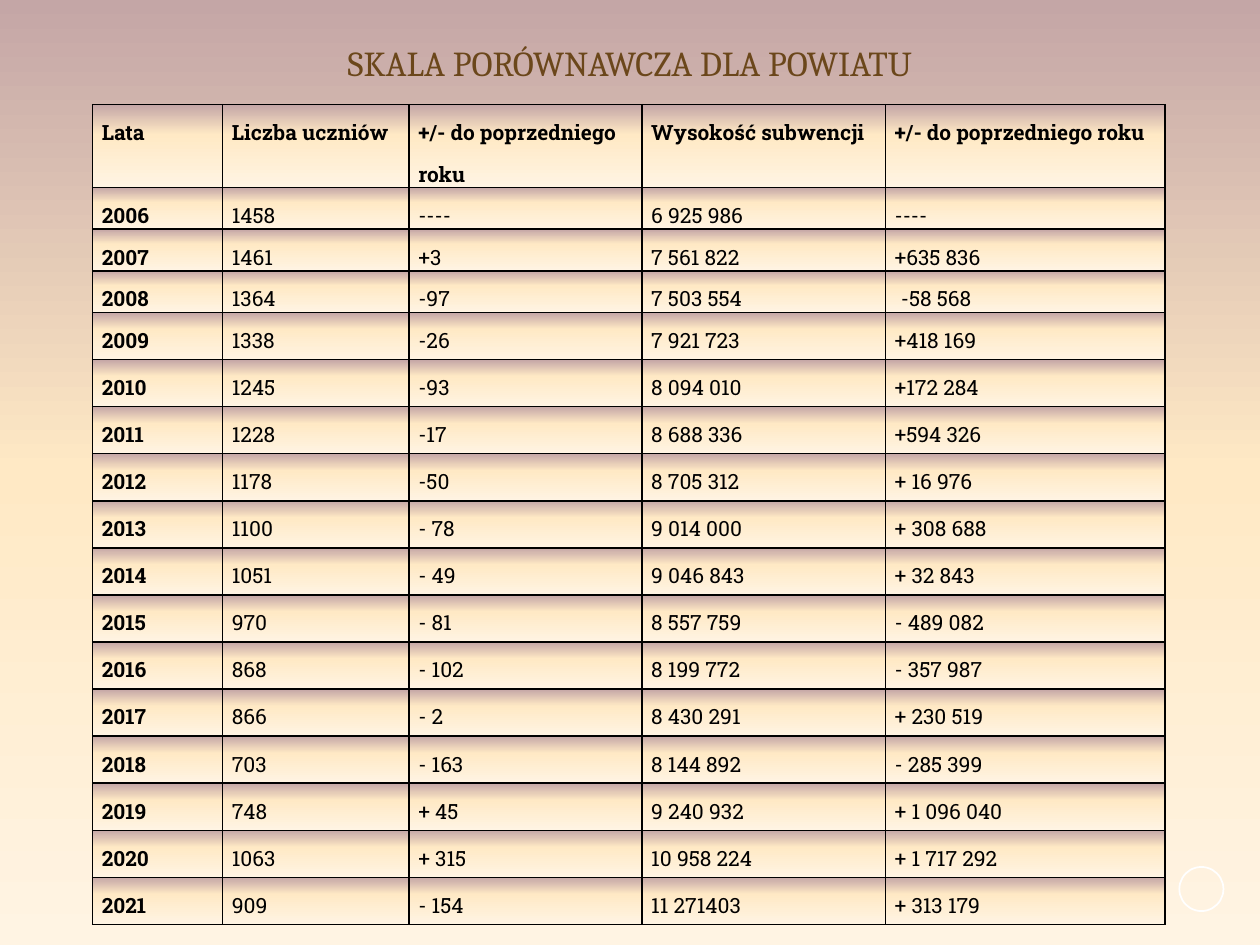
"""Build the slide comparing pupil numbers and subsidy by year for the county."""
from copy import deepcopy

from lxml.etree import SubElement
from pptx import Presentation
from pptx.dml.color import RGBColor
from pptx.enum.shapes import MSO_SHAPE as Shape
from pptx.enum.text import MSO_ANCHOR as Anchor, PP_ALIGN as Align
from pptx.oxml.ns import qn
from pptx.util import Pt

COLORS = {
    "mauve": "C4A6A6",
    "peach": "FFE9C5",
    "cream": "FFF4E3",
    "title": "6B471B",
    "black": "000000",
    "white": "FFFFFF",
}
COLUMN_WIDTHS = [74.3, 106.6, 133.1, 139.1, 159.7]
ROW_HEIGHTS = [47.4] + [23.8] * 3 + [26.92] * 13
ROWS = [
    ("Lata", "Liczba uczniów", "+/- do poprzedniego roku", "Wysokość subwencji", "+/- do poprzedniego roku"),
    ("2006", "1458", "----", "6 925 986", "----"),
    ("2007", "1461", "+3", "7 561 822", "+635 836"),
    ("2008", "1364", "-97", "7 503 554", "-58 568"),
    ("2009", "1338", "-26", "7 921 723", "+418 169"),
    ("2010", "1245", "-93", "8 094 010", "+172 284"),
    ("2011", "1228", "-17", "8 688 336", "+594 326"),
    ("2012", "1178", "-50", "8 705 312", "+ 16 976"),
    ("2013", "1100", "- 78", "9 014 000", "+ 308 688"),
    ("2014", "1051", "- 49", "9 046 843", "+ 32 843"),
    ("2015", "970", "- 81", "8 557 759", "- 489 082"),
    ("2016", "868", "- 102", "8 199 772", "- 357 987"),
    ("2017", "866", "- 2", "8 430 291", "+ 230 519"),
    ("2018", "703", "- 163", "8 144 892", "- 285 399"),
    ("2019", "748", "+ 45", "9 240 932", "+ 1 096 040"),
    ("2020", "1063", "+ 315", "10 958 224", "+ 1 717 292"),
    ("2021", "909", "- 154", "11 271403", "+ 313 179"),
]


def set_gradient(fill, element, middle):
    fill.gradient()
    fill.gradient_angle = 270
    stop_list = element.xpath(".//a:gsLst")[0]
    stop_list.append(deepcopy(stop_list[0]))
    names = ("mauve", "peach", "cream")
    for stop, position, name in zip(fill.gradient_stops, (0, middle, 1), names):
        stop.position = position
        stop.color.rgb = RGBColor.from_string(COLORS[name])


def set_borders(cell):
    properties = cell._tc.get_or_add_tcPr()
    for index, side in enumerate(("lnL", "lnR", "lnT", "lnB")):
        line = SubElement(properties, qn(f"a:{side}"), w=str(Pt(1)))
        solid = SubElement(line, qn("a:solidFill"))
        SubElement(solid, qn("a:srgbClr"), val=COLORS["black"])
        properties.insert(index, line)


presentation = Presentation()
presentation.slide_width, presentation.slide_height = Pt(720), Pt(540)
slide = presentation.slides.add_slide(presentation.slide_layouts[6])
set_gradient(slide.background.fill, slide._element, 0.5)

circle = slide.shapes.add_shape(Shape.OVAL, Pt(673.9), Pt(495.4), Pt(25.2), Pt(25.2))
circle.shadow.inherit = False
circle.fill.background()
circle.line.color.rgb = RGBColor.from_string(COLORS["white"])
circle.line.width = Pt(1)

title = slide.shapes.add_textbox(Pt(54), Pt(15.1), Pt(612), Pt(44.6))
title.text_frame.word_wrap = True
title.text_frame.vertical_anchor = Anchor.MIDDLE
paragraph = title.text_frame.paragraphs[0]
paragraph.text = "SKALA PORÓWNAWCZA DLA POWIATU"
paragraph.alignment = Align.CENTER
paragraph.line_spacing = 0.9
paragraph.font.name = "Cambria"
paragraph.font.size = Pt(20)
paragraph.font.color.rgb = RGBColor.from_string(COLORS["title"])

table = slide.shapes.add_table(
    len(ROWS), len(COLUMN_WIDTHS), Pt(52.9), Pt(59.8), Pt(sum(COLUMN_WIDTHS)), Pt(sum(ROW_HEIGHTS))
).table
table.horz_banding = False
for column, width in zip(table.columns, COLUMN_WIDTHS):
    column.width = Pt(width)
for row, height in zip(table.rows, ROW_HEIGHTS):
    row.height = Pt(height)

for row_index, texts in enumerate(ROWS):
    for column_index, text in enumerate(texts):
        cell = table.cell(row_index, column_index)
        cell.margin_left = cell.margin_right = Pt(5.3)
        cell.margin_top = cell.margin_bottom = 0
        set_gradient(cell.fill, cell._tc, 0.36)
        set_borders(cell)
        paragraph = cell.text_frame.paragraphs[0]
        paragraph.text = text
        paragraph.line_spacing = 1.5
        if text == "-58 568":
            paragraph._p.get_or_add_pPr().set("indent", str(Pt(3.6)))
        paragraph.font.name = "Roboto Slab"
        paragraph.font.size = Pt(12)
        paragraph.font.bold = row_index == 0 or column_index == 0
        paragraph.font.color.rgb = RGBColor.from_string(COLORS["black"])

presentation.save("out.pptx")
